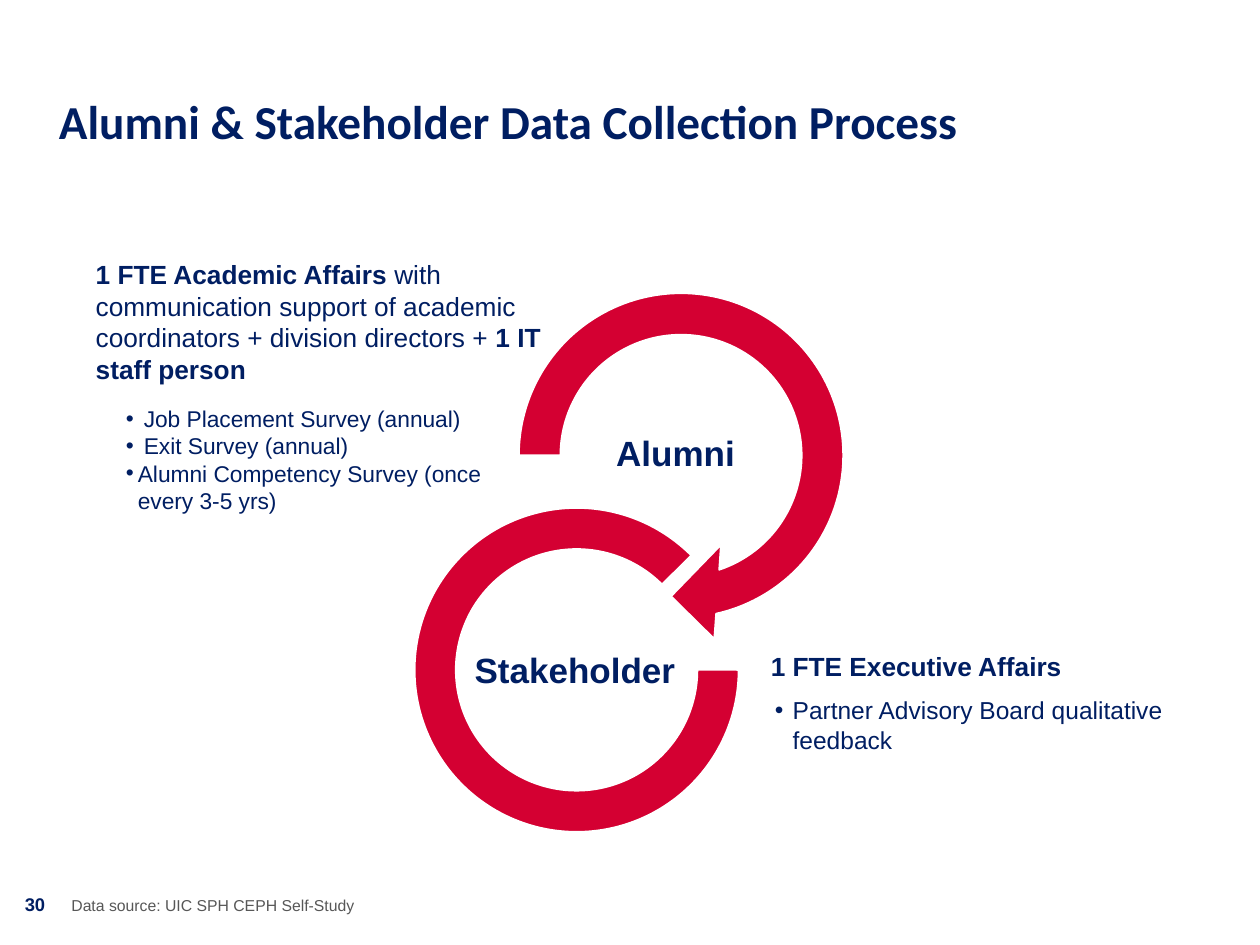
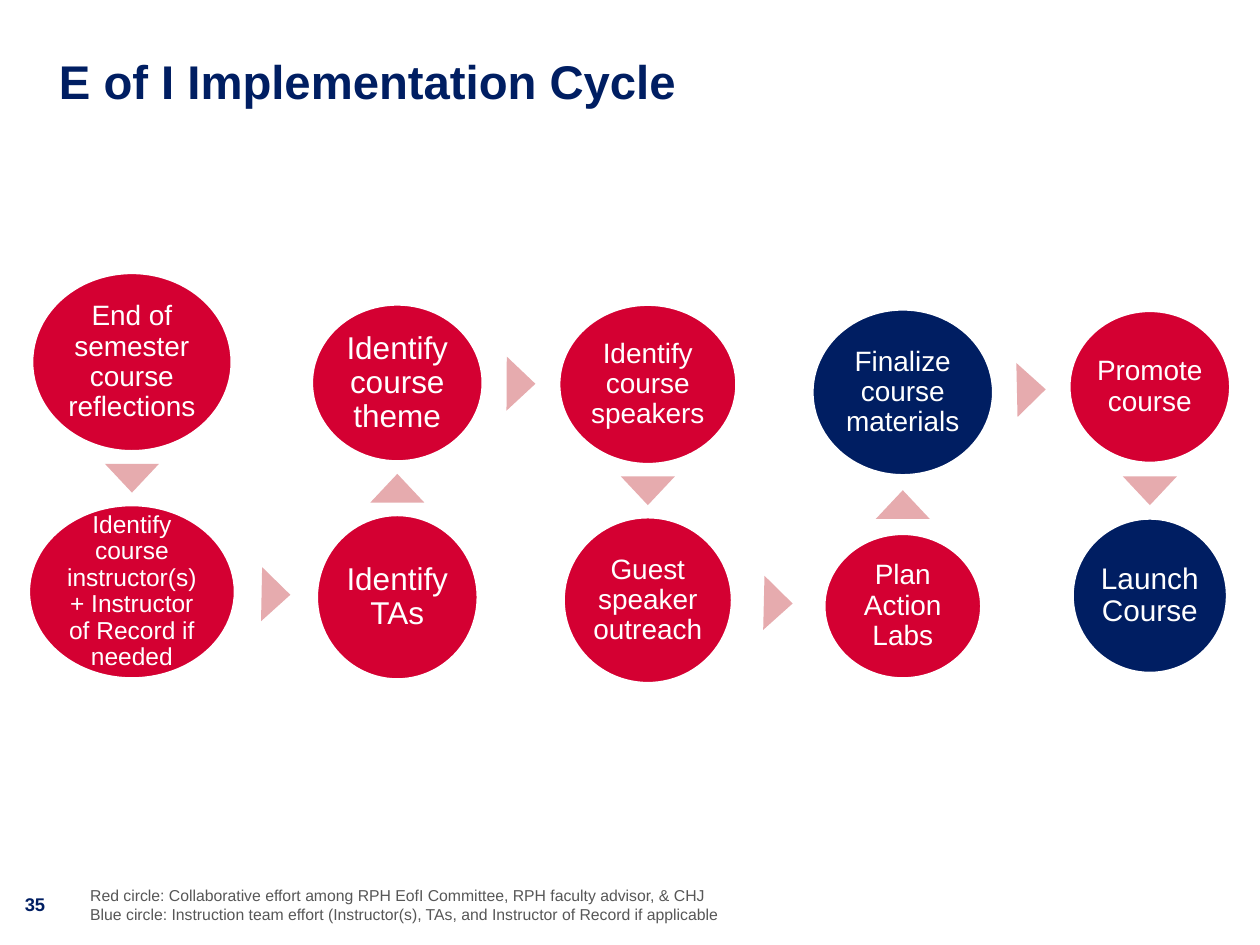
from math import atan2, degrees

from lxml.etree import SubElement
from pptx import Presentation
from pptx.dml.color import RGBColor
from pptx.enum.shapes import MSO_SHAPE
from pptx.enum.text import MSO_ANCHOR, PP_ALIGN
from pptx.oxml.ns import qn
from pptx.util import Cm, Pt

NAVY, RED, PINK, GRAY, WHITE = "001E62", "D40032", "E6ABAE", "575757", "FFFFFF"
DEFAULT_INSETS = (0.25, 0.13)


def color(value):
    """Turn a hex string into a colour."""
    return RGBColor.from_string(value)


class Deck:
    """Hold the style and the current slide."""

    def __init__(self):
        """Start an empty presentation."""
        self.presentation = Presentation()
        self.presentation.slide_width = Cm(25.4)
        self.presentation.slide_height = Cm(19.05)
        self.slide = None

    def add_slide(self, title, top, number, font="Arial"):
        """Add a slide with its title and number."""
        self.slide = self.presentation.slides.add_slide(self.presentation.slide_layouts[6])
        self.text((1.19, top, 23.01, 2.26), [title], 27, bold=True, font=font,
                  insets=(0, 0), spacing=0.9)
        self.text((0.25, 17.88, 1.24, 0.71), [str(number)], 10.5, bold=True)

    def fill_text(self, shape, paragraphs, size, fill=NAVY, bold=False, font="Arial",
                  insets=DEFAULT_INSETS, spacing=None, alignment=PP_ALIGN.LEFT,
                  anchor=MSO_ANCHOR.TOP, hanging=()):
        """Write paragraphs, each a string or a list of (text, bold) runs."""
        frame = shape.text_frame
        frame.word_wrap = True
        frame.vertical_anchor = anchor
        frame.margin_left = frame.margin_right = Cm(insets[0])
        frame.margin_top = frame.margin_bottom = Cm(insets[1])
        for index, content in enumerate(paragraphs):
            paragraph = frame.add_paragraph() if index else frame.paragraphs[0]
            if hanging:
                self.bullet(paragraph, hanging[index])
            paragraph.alignment = alignment
            if spacing:
                paragraph.line_spacing = spacing
            for words, strong in [(content, bold)] if isinstance(content, str) else content:
                run = paragraph.add_run()
                run.text = words
                run.font.name = font
                run.font.size = Pt(size)
                run.font.bold = strong
                run.font.color.rgb = color(fill)

    def bullet(self, paragraph, indent):
        """Give a paragraph a bullet with a hanging indent."""
        properties = paragraph._p.get_or_add_pPr()
        properties.set("marL", str(Cm(indent)))
        properties.set("indent", str(-Cm(indent)))
        SubElement(properties, qn("a:buFont"), typeface="Arial")
        SubElement(properties, qn("a:buChar"), char="•")

    def text(self, box, paragraphs, size, **style):
        """Add a text box."""
        shape = self.slide.shapes.add_textbox(*map(Cm, box))
        self.fill_text(shape, paragraphs, size, **style)

    def footnote(self, left, width, lines):
        """Add the gray note beside the slide number."""
        self.text((left, 17.86, width, 0.76), lines, 9, fill=GRAY, anchor=MSO_ANCHOR.MIDDLE)

    def shape(self, kind, box, fill, outlined=True, adjustments=()):
        """Add a filled preset shape."""
        shape = self.slide.shapes.add_shape(kind, *map(Cm, box))
        shape.shadow.inherit = False
        shape.fill.solid()
        shape.fill.fore_color.rgb = color(fill)
        if outlined:
            shape.line.color.rgb = color(WHITE)
            shape.line.width = Pt(1)
        else:
            shape.line.fill.background()
        for index, value in enumerate(adjustments):
            shape.adjustments[index] = value
        return shape

    def ring_label(self, left, top, label):
        """Name a ring at its centre."""
        self.text((left, top, 4.24, 2.11), [label], 20, bold=True, insets=(0.03, 0.03),
                  spacing=0.9, alignment=PP_ALIGN.CENTER, anchor=MSO_ANCHOR.MIDDLE)

    def step(self, center, extent, fill, size, label):
        """Add a labelled circle around its centre."""
        (x, y), (width, height) = center, extent
        circle = self.shape(MSO_SHAPE.OVAL, (x - width / 2, y - height / 2, width, height), fill)
        self.fill_text(circle, [label], size, fill=WHITE, insets=(0.05, 0.05), spacing=0.9,
                       alignment=PP_ALIGN.CENTER, anchor=MSO_ANCHOR.MIDDLE)

    def step_arrow(self, start, start_extent, end, end_extent):
        """Point a triangle from one circle to the next, midway in the gap."""
        width, height = 1.09, 0.58
        across, down = end[0] - start[0], end[1] - start[1]
        middle = [(start[0] + end[0]) / 2, (start[1] + end[1]) / 2]
        axis = 0 if abs(across) > abs(down) else 1
        direction = 1 if (across, down)[axis] > 0 else -1
        middle[axis] += direction * (start_extent[axis] - end_extent[axis]) / 4
        box = (middle[0] - width / 2, middle[1] - height / 2, width, height)
        triangle = self.shape(MSO_SHAPE.ISOSCELES_TRIANGLE, box, PINK, outlined=False)
        triangle.rotation = degrees(atan2(down, across)) + 90


def add_data_collection(deck):
    """Build the alumni and stakeholder slide."""
    deck.add_slide("Alumni & Stakeholder Data Collection Process", 1.98, 30, font="Calibri")
    deck.shape(MSO_SHAPE.CIRCULAR_ARROW, (9.93, 5.38, 7.6, 7.6), RED,
               adjustments=(0.11, 11.42, 45, 108, 0.125))
    deck.ring_label(11.5, 8.13, "Alumni")
    deck.shape(MSO_SHAPE.BLOCK_ARC, (8.36, 10.24, 6.53, 6.53), RED, adjustments=(0, 189, 0.127))
    deck.ring_label(9.47, 12.5, "Stakeholder")
    deck.text((1.68, 5.08, 9.83, 2.82), [
        [("1 FTE Academic Affairs ", True),
         ("with communication support of academic coordinators + division directors + ", False),
         ("1 IT", True)],
        [("staff person", True)]], 15)
    deck.text((2.29, 8.03, 8.59, 2.49), [
        "Job Placement Survey (annual)",
        "Exit Survey (annual)",
        "Alumni Competency Survey (once every 3-5 yrs)"], 13, hanging=(0.36, 0.36, 0.24))
    deck.text((15.29, 12.98, 9.22, 0.89), ["1 FTE Executive Affairs"], 15, bold=True)
    deck.text((15.37, 13.89, 9.22, 1.45), ["Partner Advisory Board qualitative feedback"], 14,
              hanging=(0.36,))
    deck.footnote(1.19, 8.59, ["Data source: UIC SPH CEPH Self-Study"])


def add_implementation_cycle(deck):
    """Build the implementation cycle slide."""
    deck.add_slide("E of I Implementation Cycle", 1.19, 35)
    columns = (2.66, 8.01, 13.06, 18.2, 23.18)
    steps = [
        (0, 7.3, (4.01, 3.58), RED, 16, "End of semester course reflections"),
        (0, 11.93, (4.14, 3.48), RED, 14,
         "Identify course instructor(s) + Instructor of Record if needed"),
        (1, 12.04, (3.23, 3.3), RED, 18, "Identify TAs"),
        (1, 7.72, (3.43, 3.15), RED, 18, "Identify course theme"),
        (2, 7.75, (3.56, 3.2), RED, 16, "Identify course speakers"),
        (2, 12.1, (3.38, 3.33), RED, 16, "Guest speaker outreach"),
        (3, 12.22, (3.15, 2.9), RED, 16, "Plan Action Labs"),
        (3, 7.91, (3.63, 3.33), NAVY, 16, "Finalize course materials"),
        (4, 7.8, (3.23, 3.05), RED, 16, "Promote course"),
        (4, 12.01, (3.1, 3.1), NAVY, 17, "Launch Course"),
    ]
    previous = None
    for column, y, extent, fill, size, label in steps:
        center = (columns[column], y)
        if previous:
            deck.step_arrow(*previous, center, extent)
        deck.step(center, extent, fill, size, label)
        previous = (center, extent)
    deck.footnote(1.57, 14.05, [
        "Red circle: Collaborative effort among RPH EofI Committee, RPH faculty advisor, & CHJ",
        "Blue circle: Instruction team effort (Instructor(s), TAs, and Instructor of Record "
        "if applicable"])


def main():
    """Build and save the presentation."""
    deck = Deck()
    add_data_collection(deck)
    add_implementation_cycle(deck)
    deck.presentation.save("out.pptx")


if __name__ == "__main__":
    main()
